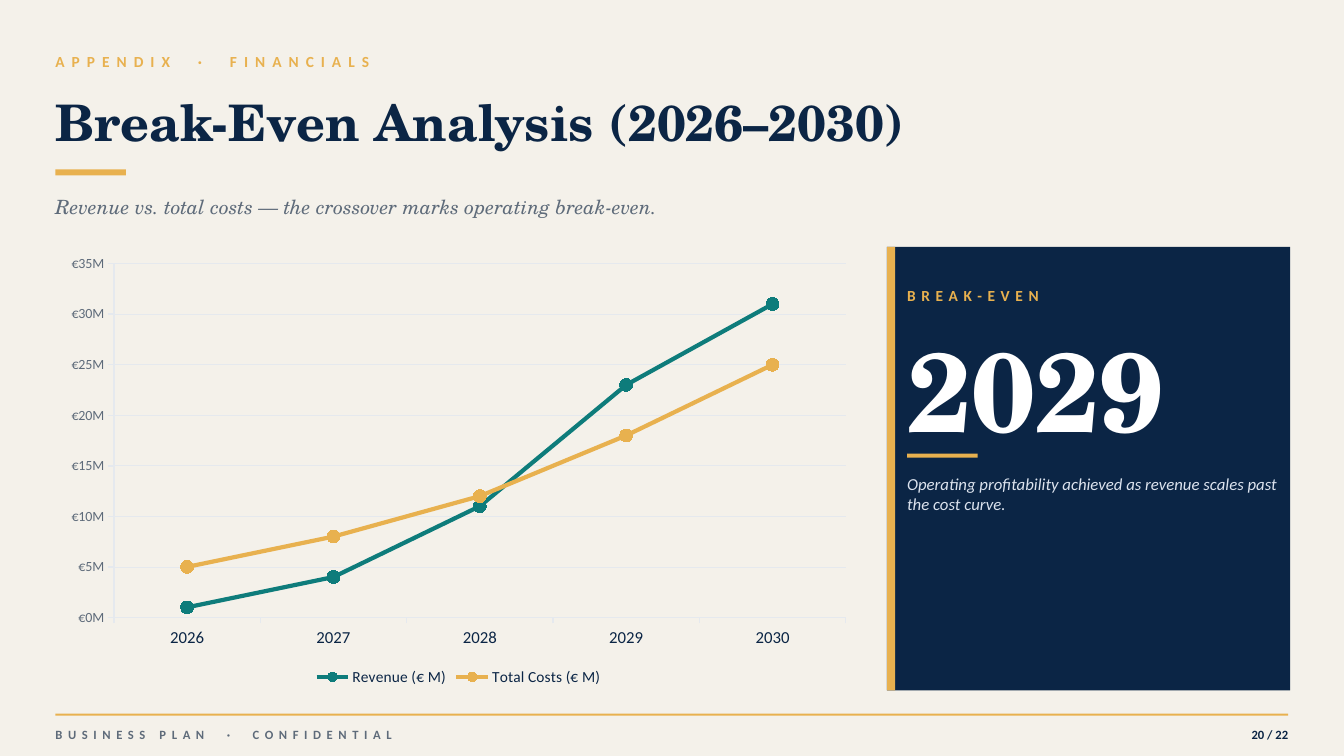
from pptx import Presentation
from pptx.chart.data import CategoryChartData
from pptx.dml.color import RGBColor
from pptx.enum import chart as ch, shapes, text
from pptx.util import Pt

SANS, SERIF = "Calibri", "TeX Gyre Schola"
NAVY, GOLD, TEAL = "0B2545", "E8B14F", "0E7C7B"
GREY, RULE, PALE = "5E6B7A", "E5E9EE", "DCE3EE"
LEFT = 39.6


def color(code):
    return RGBColor.from_string(code)


def style(font, size, code, face=SANS, bold=False, italic=False):
    font.name, font.size = face, Pt(size)
    font.bold, font.italic = bold, italic
    font.color.rgb = color(code)


def write(box, words, size, code, gap=0, right=False, top=False, **look):
    """Fill a text shape with one styled line; gap is the letter spacing."""
    frame = box.text_frame
    frame.text = words
    frame.word_wrap = True
    frame.auto_size = text.MSO_AUTO_SIZE.NONE
    frame.margin_left = frame.margin_right = 0
    frame.margin_top = frame.margin_bottom = 0
    anchor = text.MSO_ANCHOR
    frame.vertical_anchor = anchor.TOP if top else anchor.MIDDLE
    para = frame.paragraphs[0]
    para.alignment = text.PP_ALIGN.RIGHT if right else text.PP_ALIGN.LEFT
    run = para.runs[0]
    style(run.font, size, code, **look)
    if gap:
        run._r.get_or_add_rPr().set("spc", str(gap * 100))


def label(slide, x, y, w, h, words, size, code, **look):
    box = slide.shapes.add_textbox(Pt(x), Pt(y), Pt(w), Pt(h))
    write(box, words, size, code, **look)


def block(slide, x, y, w, h, code):
    rect = slide.shapes.add_shape(
        shapes.MSO_SHAPE.RECTANGLE, Pt(x), Pt(y), Pt(w), Pt(h))
    rect.shadow.inherit = False
    rect.fill.solid()
    rect.fill.fore_color.rgb = color(code)
    rect.line.fill.background()


def header(slide, x, y, w):
    label(slide, x, y, 720, 23, "APPENDIX  ·  FINANCIALS", 11, GOLD,
          gap=5, bold=True)
    title = slide.shapes.title
    title.left, title.top = Pt(x), Pt(y + 23.8)
    title.width, title.height = Pt(w), Pt(61.2)
    write(title, "Break-Even Analysis (2026–2030)", 36, NAVY,
          face=SERIF, bold=True)
    block(slide, x, y + 88.6, 50.4, 4.3, GOLD)
    label(slide, x, y + 100.8, w, 28.8,
          "Revenue vs. total costs — the crossover marks operating break-even.",
          14, GREY, face=SERIF, italic=True)


def trend(slide, x, y, w, h):
    data = CategoryChartData()
    data.categories = ["2026", "2027", "2028", "2029", "2030"]
    data.add_series("Revenue (€ M)", [1, 4, 11, 23, 31])
    data.add_series("Total Costs (€ M)", [5, 8, 12, 18, 25])
    chart = slide.shapes.add_chart(
        ch.XL_CHART_TYPE.LINE_MARKERS, Pt(x), Pt(y), Pt(w), Pt(h), data).chart
    chart.has_title = False
    style(chart.font, 10, "000000")
    chart.has_legend = True
    chart.legend.position = ch.XL_LEGEND_POSITION.BOTTOM
    chart.legend.include_in_layout = False
    style(chart.legend.font, 11, NAVY)

    years, money = chart.category_axis, chart.value_axis
    for axis, size, code in ((years, 12, NAVY), (money, 10, GREY)):
        style(axis.tick_labels.font, size, code)
        axis.major_tick_mark = ch.XL_TICK_MARK.OUTSIDE
        axis.format.line.color.rgb = color(RULE)
        axis.format.line.width = Pt(1)
    years.tick_label_position = ch.XL_TICK_LABEL_POSITION.LOW
    money.minimum_scale, money.maximum_scale, money.major_unit = 0, 35, 5
    money.tick_labels.number_format = '"€"0"M"'
    money.tick_labels.number_format_is_linked = False
    money.has_major_gridlines = True
    grid = money.major_gridlines.format.line
    grid.color.rgb, grid.width = color(RULE), Pt(0.5)

    plot = chart.plots[0]
    plot.vary_by_categories = False
    for line, code in zip(plot.series, (TEAL, GOLD)):
        line.smooth = False
        line.format.line.color.rgb = color(code)
        line.format.line.width = Pt(3)
        mark = line.marker
        mark.style, mark.size = ch.XL_MARKER_STYLE.CIRCLE, 9
        mark.format.fill.solid()
        mark.format.fill.fore_color.rgb = color(code)
        mark.format.line.color.rgb = color(code)


def panel(slide, x, y, w, h):
    block(slide, x, y, w, h, NAVY)
    block(slide, x, y, 5.8, h, GOLD)
    left, wide = x + 14.4, w - 21.6
    label(slide, left, y + 21.6, wide, 25.2, "BREAK-EVEN", 11, GOLD,
          gap=4, bold=True)
    label(slide, left, y + 54, wide, 93.6, "2029", 80, "FFFFFF",
          face=SERIF, bold=True)
    block(slide, left, y + 147.6, 50.4, 2.9, GOLD)
    label(slide, left, y + 162, wide, 100.8,
          "Operating profitability achieved as revenue scales past "
          "the cost curve.", 12, PALE, top=True, italic=True)


def footer(slide, x, y, w):
    block(slide, x, y, w, 1.44, GOLD)
    label(slide, x, y + 5, 432, 20.2, "BUSINESS PLAN  ·  CONFIDENTIAL", 9,
          GREY, gap=4, bold=True)
    label(slide, x + w - 72, y + 5, 72, 20.2, "20 / 22", 9, NAVY,
          right=True, bold=True)


def main():
    deck = Presentation()
    deck.slide_width, deck.slide_height = Pt(960), Pt(540)
    slide = deck.slides.add_slide(deck.slide_layouts.get_by_name("Title Only"))
    slide.background.fill.solid()
    slide.background.fill.fore_color.rgb = color("F4F1EA")
    header(slide, LEFT, 32.4, 885.6)
    trend(slide, LEFT, 176.4, 576, 316.8)
    panel(slide, 633.6, 176.4, 288, 316.8)
    footer(slide, LEFT, 509.8, 880.6)
    deck.save("out.pptx")


if __name__ == "__main__":
    main()
